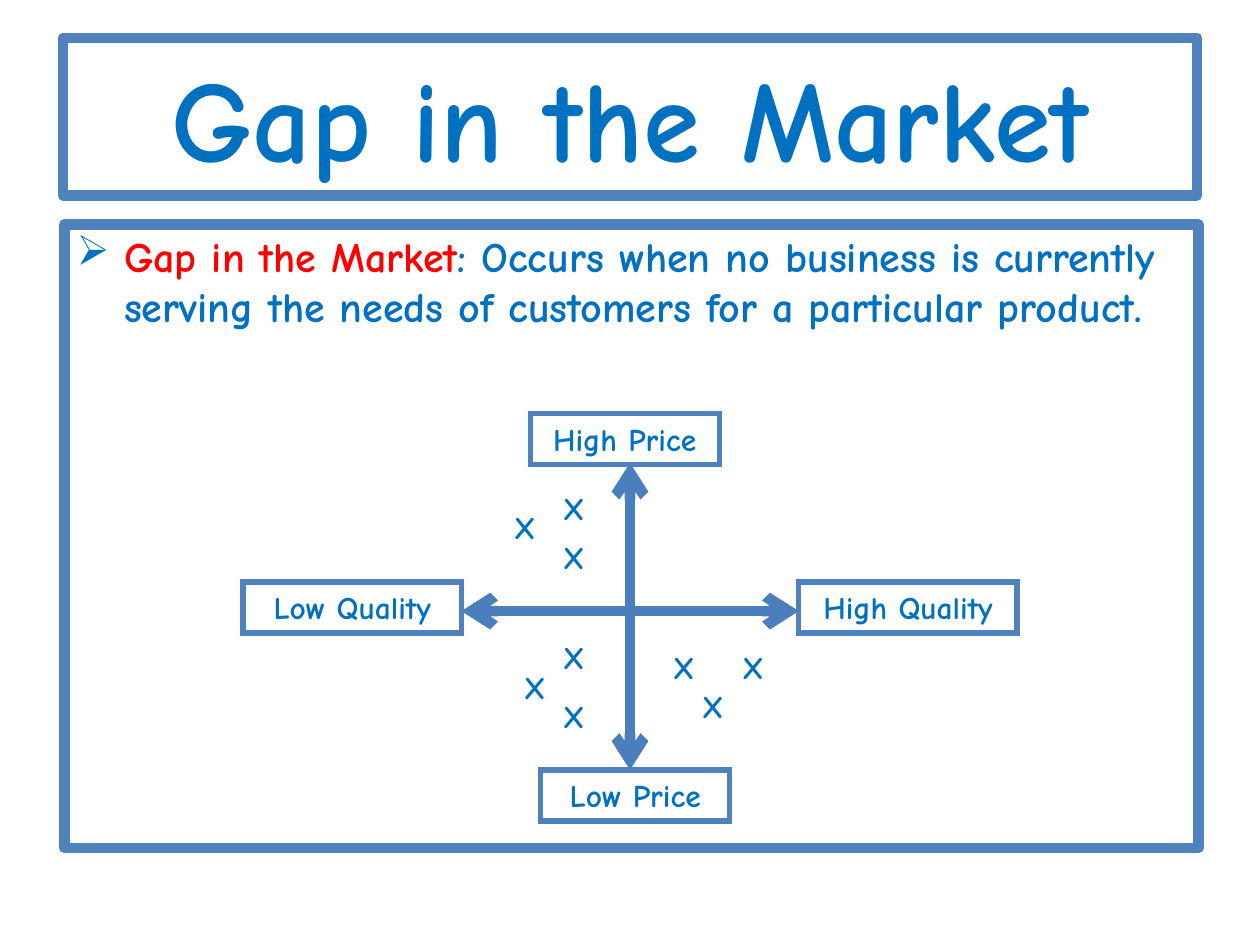
"""Build the "Gap in the Market" slide with its price and quality positioning map."""
import lxml.etree
import pptx
import pptx.dml.color
import pptx.enum.shapes
import pptx.enum.text
import pptx.oxml.ns
import pptx.util

Pt = pptx.util.Pt
qn = pptx.oxml.ns.qn
ALIGN = pptx.enum.text.PP_ALIGN
ANCHOR = pptx.enum.text.MSO_ANCHOR

WHITE = pptx.dml.color.RGBColor(0xFF, 0xFF, 0xFF)
FRAME = pptx.dml.color.RGBColor(0x4F, 0x81, 0xBD)
AXIS = pptx.dml.color.RGBColor(0x4B, 0x7E, 0xBC)
BLUE = pptx.dml.color.RGBColor(0x00, 0x70, 0xC0)
RED = pptx.dml.color.RGBColor(0xFF, 0x00, 0x00)

TITLE = "Gap in the Market"
DEFINITION = (": Occurs when no business is currently serving the needs "
              "of customers for a particular product.")
LABEL_HEIGHT = 29.1
LABELS = [
    ("High Price", 303, 236.2, 108),
    ("Low Price", 309, 440, 108),
    ("High Quality", 456.5, 332.6, 124.7),
    ("Low Quality", 138.9, 332.6, 124.7),
]
AXES = [(360, 440, 360, 264.5), (263.6, 349.2, 456.5, 349.2)]
MARKS = [
    (417, 366.5), (377.5, 366.5), (394, 389),
    (314.6, 360.8), (314.6, 275.8), (314.6, 304),
    (292.3, 378), (314.6, 394.6), (286.6, 287),
]


class SlideBuilder:
    """Hold the style and the current slide, and add each kind of element."""

    font = {"name": "Comic Neue", "bold": True}

    def __init__(self, prs):
        self.s = prs.slides.add_slide(prs.slide_layouts[6])

    def add_text(self, sp, runs, size, **paragraph):
        tf = sp.text_frame
        tf.word_wrap = True
        p = tf.paragraphs[0]
        for name, value in paragraph.items():
            setattr(p, name, value)
        for text, color in runs:
            r = p.add_run()
            r.text = text
            for name, value in dict(self.font, size=Pt(size)).items():
                setattr(r.font, name, value)
            r.font.color.rgb = color
        return p

    def box(self, x, y, w, h, weight, anchor=ANCHOR.MIDDLE):
        sp = self.s.shapes.add_shape(
            pptx.enum.shapes.MSO_SHAPE.RECTANGLE, Pt(x), Pt(y), Pt(w), Pt(h))
        sp.shadow.inherit = False
        sp.fill.solid()
        sp.fill.fore_color.rgb = WHITE
        sp.line.color.rgb = FRAME
        sp.line.width = Pt(weight)
        sp.text_frame.vertical_anchor = anchor
        return sp

    def title(self, text, x, y, w, h):
        self.add_text(self.box(x, y, w, h, 6), [(text, BLUE)], 66, alignment=ALIGN.CENTER)

    def body(self, runs, x, y, w, h):
        sp = self.box(x, y, w, h, 6, ANCHOR.TOP)
        p = self.add_text(sp, runs, 24, alignment=ALIGN.LEFT, space_before=Pt(4.8))
        pPr = p._p.get_or_add_pPr()
        pPr.set("marL", str(Pt(27)))
        pPr.set("indent", str(Pt(-27)))
        color = lxml.etree.SubElement(pPr, qn("a:buClr"))
        lxml.etree.SubElement(color, qn("a:srgbClr"), val=str(BLUE))
        lxml.etree.SubElement(pPr, qn("a:buChar"), char="➢")

    def label(self, text, x, y, w):
        sp = self.box(x, y, w, LABEL_HEIGHT, 3, ANCHOR.TOP)
        ln = sp._element.spPr.get_or_add_ln()
        lxml.etree.SubElement(ln, qn("a:miter"), lim="800000")
        self.add_text(sp, [(text, BLUE)], 18, alignment=ALIGN.CENTER)

    def axis(self, x1, y1, x2, y2):
        cxn = self.s.shapes.add_connector(
            pptx.enum.shapes.MSO_CONNECTOR.STRAIGHT, Pt(x1), Pt(y1), Pt(x2), Pt(y2))
        cxn.line.color.rgb = AXIS
        cxn.line.width = Pt(6)
        spPr = cxn._element.spPr
        for end in ("a:headEnd", "a:tailEnd"):
            lxml.etree.SubElement(spPr.get_or_add_ln(), qn(end), type="arrow")
        lxml.etree.SubElement(spPr, qn("a:effectLst"))

    def mark(self, x, y):
        sp = self.s.shapes.add_textbox(Pt(x), Pt(y), Pt(28), Pt(LABEL_HEIGHT))
        self.add_text(sp, [("X", BLUE)], 18)


def main():
    prs = pptx.Presentation()
    prs.slide_width, prs.slide_height = Pt(720), Pt(540)
    slide = SlideBuilder(prs)
    slide.title(TITLE, 36, 21.6, 648, 90)
    slide.body([(TITLE, RED), (DEFINITION, BLUE)], 36.8, 128.2, 648, 356.4)
    for axis in AXES:
        slide.axis(*axis)
    for label in LABELS:
        slide.label(*label)
    for mark in MARKS:
        slide.mark(*mark)
    prs.save("out.pptx")


if __name__ == "__main__":
    main()
